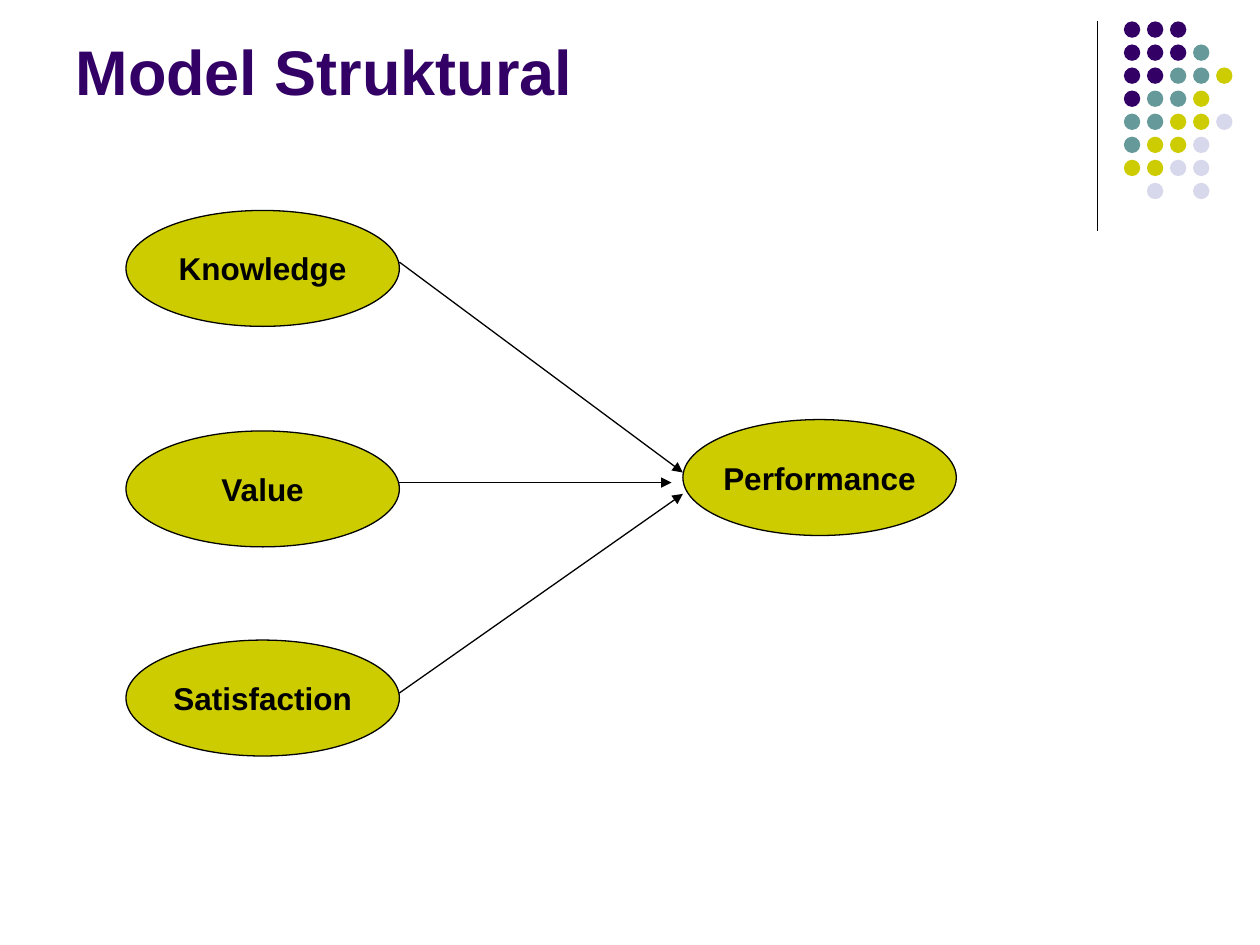
from pptx import Presentation
from pptx.dml.color import RGBColor
from pptx.enum.shapes import MSO_CONNECTOR, MSO_SHAPE
from pptx.enum.text import MSO_ANCHOR, PP_ALIGN
from pptx.oxml.ns import qn
from pptx.util import Inches, Pt
from lxml.etree import SubElement

INK, PLUM, TEAL, LIME, MIST = "000000", "330066", "669999", "CCCC00", "D8D8EC"
TINTS = {"P": PLUM, "T": TEAL, "L": LIME, "M": MIST}
DOTS = ["PPP", "PPPT", "PPTTL", "PTTL", "TTLLM", "TLLM", "LLMM", " M M"]
CAUSES = [("Knowledge", 1.67), ("Value", 3.42), ("Satisfaction", 5.08)]
ARROWS = [((3.17, 2.08), (5.42, 3.75)),
          ((3.17, 3.83), (5.33, 3.83)),
          ((3.17, 5.5), (5.42, 3.92))]


def paint(code):
    """Turn a hex string into a colour."""
    return RGBColor.from_string(code)


def write(frame, text, size=18, color=INK, align=PP_ALIGN.CENTER,
          anchor=MSO_ANCHOR.MIDDLE, wrap=False):
    """Put formatted bold text in a frame."""
    frame.text = text
    frame.word_wrap = wrap
    frame.vertical_anchor = anchor
    line = frame.paragraphs[0]
    line.alignment = align
    font = line.runs[0].font
    font.name, font.size, font.bold = "Arial", Pt(size), True
    font.color.rgb = paint(color)


class Board:
    """Hold the line style and the current slide."""

    def __init__(self, slide, width=0.75):
        """Keep the slide and the line width."""
        self.slide, self.width = slide, Pt(width)

    def title(self, text, *box):
        """Place the title."""
        shape = self.slide.shapes.title
        shape.left, shape.top, shape.width, shape.height = map(Inches, box)
        write(shape.text_frame, text, size=36, color=PLUM, wrap=True,
              align=PP_ALIGN.LEFT, anchor=MSO_ANCHOR.BOTTOM)

    def oval(self, *box, fill=LIME):
        """Draw a plain ellipse."""
        shape = self.slide.shapes.add_shape(MSO_SHAPE.OVAL, *map(Inches, box))
        shape.shadow.inherit = False
        shape.fill.solid()
        shape.fill.fore_color.rgb = paint(fill)
        shape.line.fill.background()
        return shape

    def node(self, text, left, top):
        """Draw a labelled, outlined ellipse."""
        shape = self.oval(left, top, 2.17, 0.92)
        shape.line.color.rgb = paint(INK)
        shape.line.width = self.width
        write(shape.text_frame, text)

    def line(self, start, end, arrow=False):
        """Draw a line, with an arrowhead on request."""
        link = self.slide.shapes.add_connector(
            MSO_CONNECTOR.STRAIGHT, *map(Inches, start + end))
        link.line.color.rgb = paint(INK)
        link.line.width = self.width
        if arrow:
            SubElement(link.line._get_or_add_ln(), qn("a:tailEnd"), type="triangle")
        SubElement(link._element.spPr, qn("a:effectLst"))

    def dots(self, left, top, step, size):
        """Draw the grid of coloured dots."""
        for row, marks in enumerate(DOTS):
            for col, mark in enumerate(marks):
                if mark in TINTS:
                    self.oval(left + col * step, top + row * step,
                              size, size, fill=TINTS[mark])


def main():
    """Build and save the slide."""
    deck = Presentation()
    deck.slide_width, deck.slide_height = Inches(10), Inches(7.5)
    board = Board(deck.slides.add_slide(deck.slide_layouts[5]))
    board.line((8.71, 0.17), (8.71, 1.83))
    board.dots(8.92, 0.17, 0.183, 0.13)
    board.title("Model Struktural", 0.5, 0.13, 8.25, 0.78)
    for text, top in CAUSES:
        board.node(text, 1, top)
    board.node("Performance", 5.42, 3.33)
    for start, end in ARROWS:
        board.line(start, end, arrow=True)
    deck.save("out.pptx")


if __name__ == "__main__":
    main()
